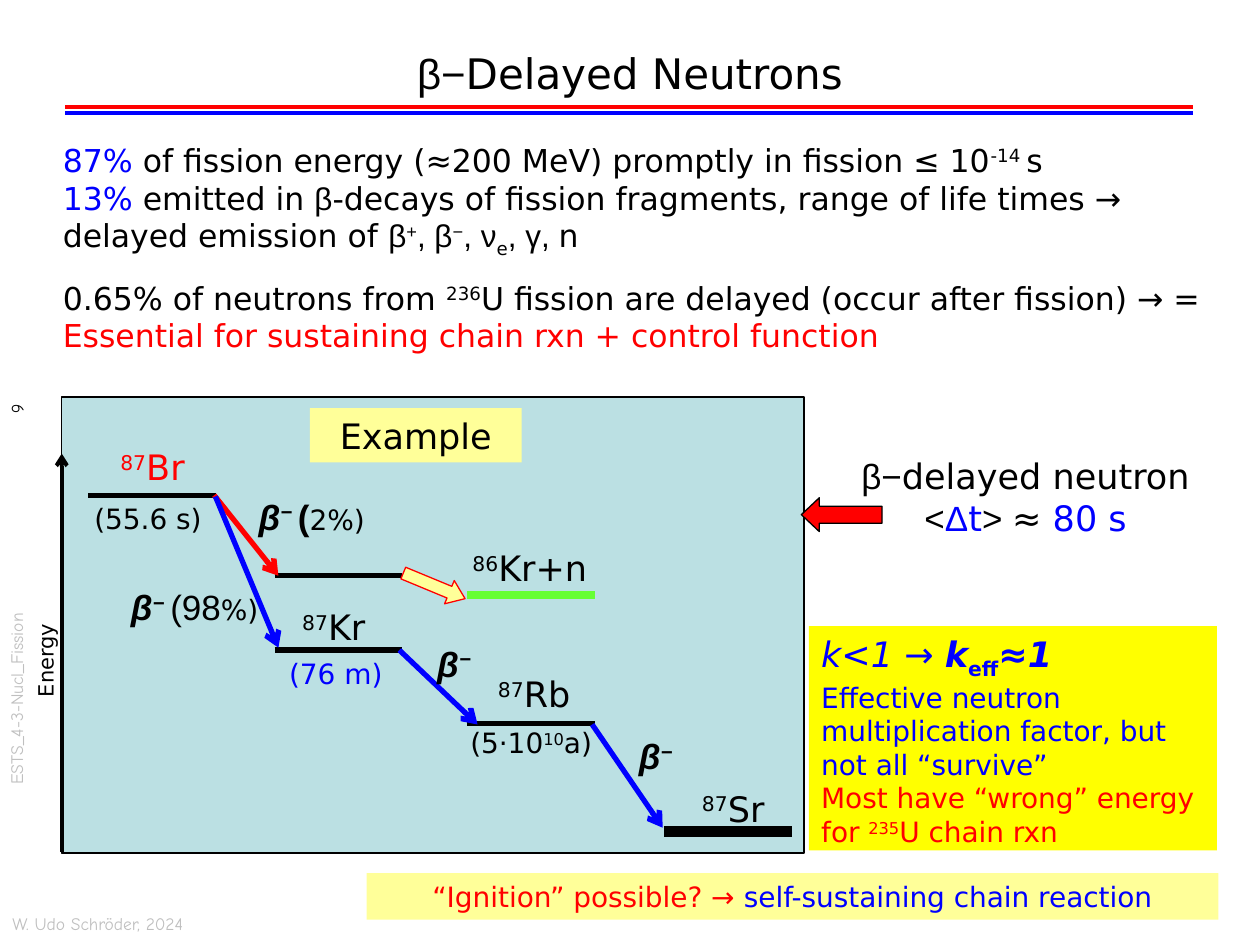
from lxml.etree import SubElement
from pptx import Presentation
from pptx.dml.color import RGBColor
from pptx.enum.shapes import MSO_CONNECTOR as Link, MSO_SHAPE as Shape
from pptx.enum.text import MSO_ANCHOR as Anchor, PP_ALIGN as Align
from pptx.oxml.ns import qn
from pptx.util import Pt

HEX = {
    "black": "000000", "white": "FFFFFF", "gray": "BFBFBF", "red": "FF0000",
    "blue": "0000FF", "teal": "BBE0E3", "cream": "FFFF99",
    "yellow": "FFFF00", "green": "66FF33",
}
SANS, ARIAL, COMIC = "DejaVu Sans", "Arial", "Comic Neue"
SUP, SUB, FLAT = {"up": 30}, {"up": -25}, {"up": 0}
BLUE, RED, BLACK = {"color": "blue"}, {"color": "red"}, {"color": "black"}
GREEK, LATIN = {"font": ARIAL}, {"font": SANS}
BREAK = "\n"


def rgb(name):
    return RGBColor.from_string(HEX[name])


def style(run, size, color, font, bold, italic, up):
    face = run.font
    face.size, face.name = Pt(size), font
    face.bold, face.italic = bold, italic
    face.color.rgb = rgb(color)
    if up:
        run._r.get_or_add_rPr().set("baseline", str(up * 1000))


def write(shape, *paras, align=Align.CENTER, anchor=Anchor.TOP, gap=0, **form):
    """Fill a shape with paragraphs of (text, changes); changes carry over."""
    frame = shape.text_frame
    frame.word_wrap = True
    frame.vertical_anchor = anchor
    look = {"size": 20, "color": "black", "font": SANS,
            "bold": False, "italic": False, "up": 0} | form
    for i, runs in enumerate(paras):
        para = frame.add_paragraph() if i else frame.paragraphs[0]
        para.alignment = align
        if i and gap:
            para.space_before = Pt(gap)
        for words, change in runs:
            if words == BREAK:
                para.add_line_break()
                continue
            look |= change
            run = para.add_run()
            run.text = words
            style(run, **look)


def label(slide, box, *paras, turn=0, **form):
    shape = slide.shapes.add_textbox(*map(Pt, box))
    shape.rotation = turn
    write(shape, *paras, **form)


def block(slide, box, fill, edge=None, kind=Shape.RECTANGLE, turn=0, head=None):
    shape = slide.shapes.add_shape(kind, *map(Pt, box))
    shape.shadow.inherit = False
    shape.fill.solid()
    shape.fill.fore_color.rgb = rgb(fill)
    if edge:
        shape.line.color.rgb = rgb(edge)
        shape.line.width = Pt(0.75)
    else:
        shape.line.fill.background()
    shape.rotation = turn
    if head:
        shape.adjustments[1] = head
    return shape


def line(slide, ends, color="black", width=3, arrow=False):
    link = slide.shapes.add_connector(Link.STRAIGHT, *map(Pt, ends))
    link.line.color.rgb = rgb(color)
    link.line.width = Pt(width)
    if arrow:
        SubElement(link.line._get_or_add_ln(), qn("a:tailEnd"), type="arrow")
    SubElement(link._element.spPr, qn("a:effectLst"))


def level(slide, x, y, color="black", width=3):
    line(slide, (x, y, x + 73, y), color, width)


def nuclide(slide, box, mass, name, color="black"):
    label(slide, box, [(mass, SUP), (name, FLAT)], color=color)


def beta(slide, box, *share):
    label(slide, box, [("β", {}), ("− " if share else "−", SUP), *share],
          font=ARIAL, bold=True, italic=True)


def frame(slide):
    for y, color in ((64.8, "blue"), (61.2, "red")):
        line(slide, (37.4, y, 681.8, y), color, 2.25)
    note = {"size": 10, "font": COMIC, "align": Align.LEFT}
    label(slide, (0, 518.4, 190.8, 21.6), [("W. Udo Schröder, 2024", {})],
          color="gray", **note)
    label(slide, (-85.7, 344.9, 195.8, 25.2), [("ESTS_4-3-Nucl_Fission", {})],
          color="gray", turn=270, **note)
    label(slide, (-35.3, 176.4, 102.2, 31.7), [("9", {})], turn=270, **note)
    label(slide, (36, 18.7, 648, 45.4),
          [("β−", GREEK), ("Delayed Neutrons", LATIN)],
          size=24, anchor=Anchor.MIDDLE)


def facts(slide):
    label(slide, (28.8, 77, 666, 127.4), [
        ("87%", BLUE),
        (" of fission energy (≈200 MeV) promptly in fission ≤ 10", BLACK),
        ("-14 ", SUP), ("s", FLAT), (BREAK, {}),
        ("13%", BLUE), (" emitted in ", BLACK), ("β", GREEK),
        ("-decays of fission fragments, range of life times → "
         "delayed emission of ", LATIN),
        ("β", GREEK), ("+", SUP), (", β", FLAT), ("−", SUP), (", ν", FLAT),
        ("e", LATIN | SUB), (", γ, ", GREEK | FLAT), ("n", LATIN),
    ], [
        ("0.65% of neutrons from ", {}), ("236", SUP),
        ("U fission are delayed (occur after fission) → = ", FLAT),
        ("Essential for sustaining chain rxn + control function", RED),
    ], size=18, align=Align.LEFT, gap=11)


def scheme(slide):
    """Draw the decay chain with its energy axis."""
    block(slide, (35.3, 226.8, 424.1, 260.6), "teal", "black")
    for x, y in ((50.4, 283), (157, 329), (157, 371.5), (267.1, 413.3)):
        level(slide, x, y)
    level(slide, 379.4, 475.2, width=6)
    for ends, color in (
        ((122.4, 283, 159.1, 329), "red"),
        ((123.1, 283.7, 159.1, 370.1), "blue"),
        ((228.2, 371.5, 272.9, 414), "blue"),
        ((338.4, 414, 378.7, 473), "blue"),
    ):
        line(slide, ends, color, arrow=True)
    block(slide, (229, 327.6, 38.2, 14.4), "cream", "red",
          Shape.RIGHT_ARROW, 22.5, 0.67)

    nuclide(slide, (258.5, 308.9, 88.6, 31), "86", "Kr+n")
    for x, y, name, color in (
        (159.8, 342.7, "Kr", "black"), (56.2, 251.3, "Br", "red"),
        (274.3, 380.9, "Rb", "black"), (388.1, 446.4, "Sr", "black"),
    ):
        nuclide(slide, (x, y, 61.9, 31), "87", name, color)

    plain = {"bold": False}
    upright = {"italic": False} | FLAT
    small = {"size": 16} | LATIN | plain
    beta(slide, (134.6, 279.4, 87.1, 31), ("(", upright), ("2%)", small))
    beta(slide, (67.7, 331.2, 87.1, 31), ("(98", upright | plain), ("%)", small))
    beta(slide, (239, 363.6, 41, 31))
    beta(slide, (354.2, 416.2, 41, 31))

    label(slide, (42.5, 283, 84.2, 26.6), [("(55.6 s)", {})], size=16)
    label(slide, (149.8, 371.5, 84.2, 26.6), [("(76 m)", BLUE)], size=16)
    label(slide, (257.8, 411.1, 91.4, 26.6),
          [("(5·10", {}), ("10", SUP), ("a)", FLAT)], size=16)
    write(block(slide, (177.1, 233.3, 121, 31), "cream"), [("Example", {})])
    level(slide, 267.1, 339.8, "green", 4.5)
    line(slide, (35.3, 486.7, 35.3, 259.2), width=2.25, arrow=True)
    label(slide, (-34.6, 366.5, 121, 21.6), [("Energy", {})], size=12, turn=270)


def remarks(slide):
    label(slide, (475.9, 256.3, 220.3, 55.4), [
        ("β−", GREEK), ("delayed neutron ", LATIN), ("<", GREEK), ("Δ", BLUE),
        ("t", LATIN), ("> ", GREEK | BLACK), ("≈ ", LATIN), ("80 s", BLUE),
    ])
    block(slide, (457.9, 284.4, 46.1, 19.4), "red", "black",
          Shape.RIGHT_ARROW, 180, 0.53)
    slant, even = {"italic": True}, {"italic": False}
    write(block(slide, (462.2, 357.8, 233.3, 128.2), "yellow"), [
        ("k<1 ", slant), ("→ ", even), ("k", slant | {"bold": True}),
        ("eff", even | SUB), ("≈", FLAT), ("1", slant), (BREAK, {}),
        ("Effective neutron", even | {"size": 16, "bold": False}), (BREAK, {}),
        ("multiplication factor, but not all “survive”", {}),
    ], [
        ("Most have “wrong” energy for ", RED), ("235", SUP),
        ("U chain rxn", FLAT),
    ], color="blue", align=Align.LEFT)
    write(block(slide, (209.5, 499, 486.7, 26.6), "cream"),
          [("“Ignition” possible? → ", RED),
           ("self-sustaining chain reaction", BLUE)], size=16)


def main():
    deck = Presentation()
    deck.slide_width, deck.slide_height = Pt(720), Pt(540)
    slide = deck.slides.add_slide(deck.slide_layouts[6])
    slide.background.fill.solid()
    slide.background.fill.fore_color.rgb = rgb("white")
    for part in (frame, facts, scheme, remarks):
        part(slide)
    deck.save("out.pptx")


if __name__ == "__main__":
    main()
